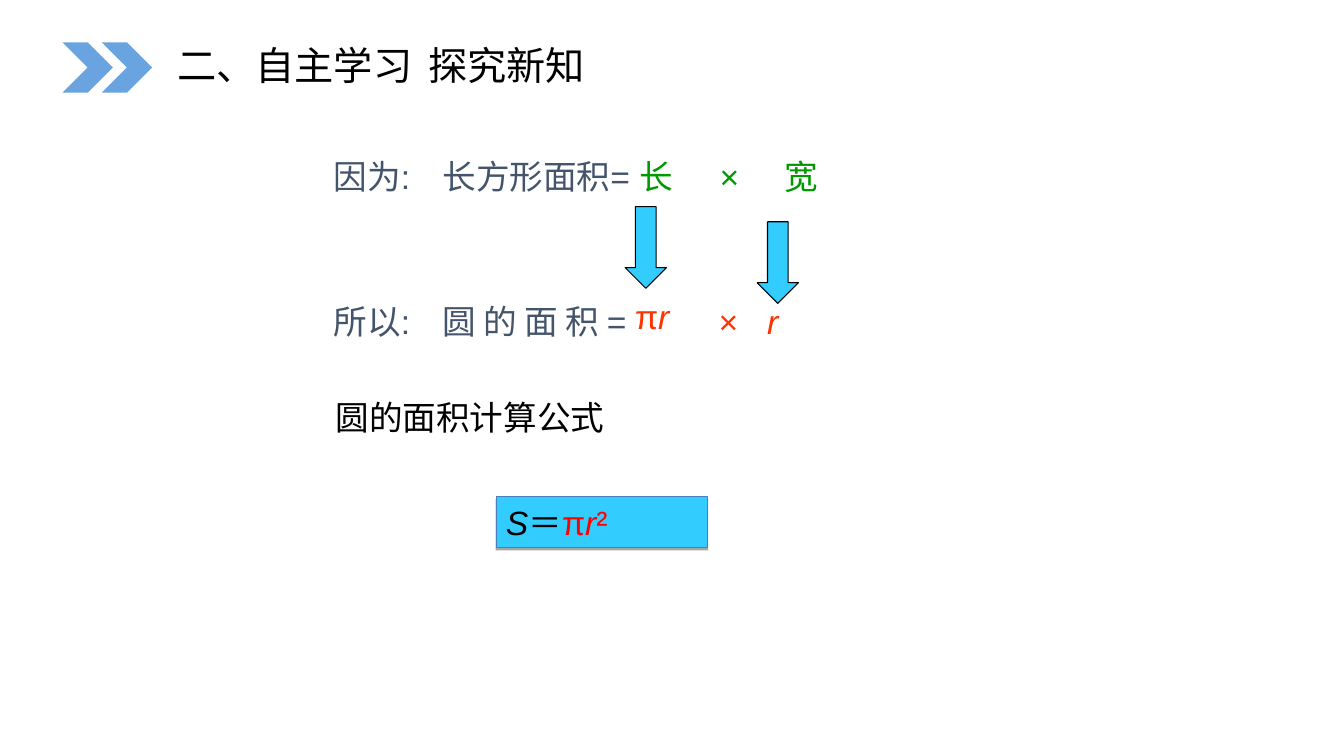
from lxml import etree
from pptx import Presentation
from pptx.dml.color import RGBColor
from pptx.enum.shapes import MSO_SHAPE
from pptx.enum.text import MSO_ANCHOR
from pptx.oxml import parse_xml
from pptx.oxml.ns import nsdecls, qn
from pptx.util import Inches, Pt

CHEVRON = MSO_SHAPE.CHEVRON
DOWN_ARROW = MSO_SHAPE.DOWN_ARROW
RECTANGLE = MSO_SHAPE.RECTANGLE
TOP = MSO_ANCHOR.TOP
MIDDLE = MSO_ANCHOR.MIDDLE

BLACK = RGBColor(0x00, 0x00, 0x00)
SLATE = RGBColor(0x44, 0x54, 0x6A)
GREEN = RGBColor(0x00, 0x99, 0x00)
ORANGE = RGBColor(0xFF, 0x33, 0x00)
RED = RGBColor(0xFF, 0x00, 0x00)
SKY = RGBColor(0x33, 0xCC, 0xFF)
CHEVRON_BLUE = RGBColor(0x69, 0xA4, 0xE1)
BORDER_BLUE = RGBColor(0x4A, 0x7E, 0xBB)


def add_filled_shape(slide, kind, left, top, width, height, fill, line=None):
    shape = slide.shapes.add_shape(
        kind, Inches(left), Inches(top), Inches(width), Inches(height))
    shape.shadow.inherit = False
    shape.fill.solid()
    shape.fill.fore_color.rgb = fill
    if line is None:
        shape.line.fill.background()
    else:
        shape.line.color.rgb = line
        shape.line.width = Pt(0.75)
    return shape


def write_text(shape, runs, size=24, spacing=None, tabs=(), wrap=True, anchor=TOP):
    frame = shape.text_frame
    frame.word_wrap = wrap
    frame.vertical_anchor = anchor
    paragraph = frame.paragraphs[0]
    paragraph.font.name = "Arial"
    paragraph.font.size = Pt(size)
    if spacing:
        paragraph.line_spacing = spacing
    if tabs:
        properties = paragraph.font._element.getparent()
        tab_list = etree.Element(qn("a:tabLst"))
        for position in tabs:
            etree.SubElement(tab_list, qn("a:tab"), pos=str(Inches(position)), algn="l")
        properties.insert(properties.index(paragraph.font._element), tab_list)
    for text, color, italic in runs:
        run = paragraph.add_run()
        run.text = text
        run.font.color.rgb = color
        run.font.italic = italic


def add_text(slide, left, top, width, height, runs, **style):
    box = slide.shapes.add_textbox(
        Inches(left), Inches(top), Inches(width), Inches(height))
    write_text(box, runs, **style)


def add_heading(slide, left, top):
    for offset in (0, 0.39):
        add_filled_shape(slide, CHEVRON, left + offset, top, 0.5, 0.5, CHEVRON_BLUE)
    add_text(slide, left + 1.04, top + 0.02, 5.59, 0.46,
             [("二、自主学习\t探究新知", BLACK, False)],
             size=28, spacing=0.9, tabs=(2.49,), anchor=MIDDLE)


def add_derivation(slide, left, top):
    equation = {"spacing": 0.8}
    add_text(slide, left, top, 5.89, 0.43,
             [("因为:\t长方形面积= ", SLATE, False), ("长\t×\t宽", GREEN, False)],
             tabs=(1.08, 3.83, 4.47), **equation)
    add_text(slide, left, top + 1.43, 6.22, 0.43,
             [("所以:\t圆 的 面 积 =\t", SLATE, False), ("×", ORANGE, False)],
             tabs=(1.08, 3.82), **equation)
    add_text(slide, left + 2.99, top + 1.31, 0.64, 0.5,
             [("π", ORANGE, False), ("r", ORANGE, True)], wrap=False)
    add_text(slide, left + 4.3, top + 1.36, 0.31, 0.5,
             [("r", ORANGE, True)], wrap=False)
    for across, down in ((2.99, 0.47), (4.3, 0.62)):
        add_filled_shape(slide, DOWN_ARROW, left + across, top + down,
                         0.41, 0.81, SKY, BLACK)


def add_formula(slide, left, top):
    add_text(slide, left, top, 2.96, 0.5,
             [("圆的面积计算公式", BLACK, False)], wrap=False)
    box = add_filled_shape(slide, RECTANGLE, left + 1.69, top + 1.04, 2.1, 0.5,
                           SKY, BORDER_BLUE)
    effects = box._element.spPr.find(qn("a:effectLst"))
    effects.append(parse_xml(
        f'<a:outerShdw {nsdecls("a")} blurRad="0" dist="{Pt(1.8)}" dir="5400000" '
        'rotWithShape="0"><a:srgbClr val="000000"><a:alpha val="35000"/>'
        '</a:srgbClr></a:outerShdw>'))
    write_text(box, [("S", BLACK, True), ("＝", BLACK, False), ("π", RED, False),
                     ("r", RED, True), ("²", RED, False)])
    box.text_frame.paragraphs[0].alignment = 1


def main():
    presentation = Presentation()
    presentation.slide_width = Inches(13.33)
    presentation.slide_height = Inches(7.5)
    slide = presentation.slides.add_slide(presentation.slide_layouts[6])
    add_heading(slide, 0.62, 0.42)
    add_derivation(slide, 3.21, 1.58)
    add_formula(slide, 3.23, 3.89)
    presentation.save("out.pptx")


if __name__ == "__main__":
    main()
